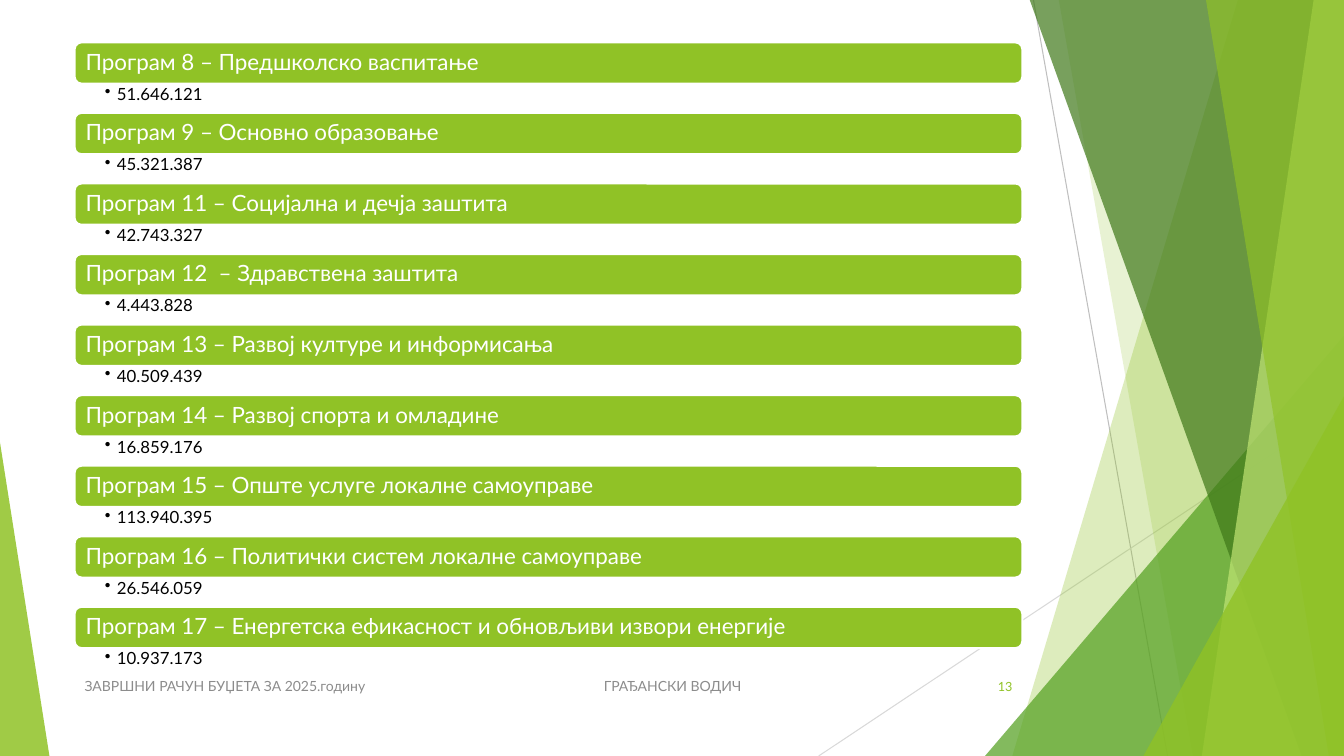
from lxml import etree
from pptx import Presentation, util as u
from pptx.dml.color import RGBColor
from pptx.enum import shapes, text
from pptx.oxml.ns import qn

PX = 9144
THEME = {
    "font": "Lato",
    "green": "90C226", "mid_green": "54A021", "dark_green": "3F7819", "pale_green": "C0E474",
    "white": "FFFFFF", "black": "000000", "grey": "8C8C8C",
    "line_dark": "BFBFBF", "line_light": "D9D9D9",
    "title_size": 16, "value_size": 12, "footer_size": 10, "number_size": 9,
}

programs = [
    ("Програм 8 – Предшколско васпитање", "51.646.121"),
    ("Програм 9 – Основно образовање", "45.321.387"),
    ("Програм 11 – Социјална и дечја заштита", "42.743.327"),
    ("Програм 12  – Здравствена заштита", "4.443.828"),
    ("Програм 13 – Развој културе и информисања", "40.509.439"),
    ("Програм 14 – Развој спорта и омладине", "16.859.176"),
    ("Програм 15 – Опште услуге локалне самоуправе", "113.940.395"),
    ("Програм 16 – Политички систем локалне самоуправе", "26.546.059"),
    ("Програм 17 – Енергетска ефикасност и обновљиви извори енергије", "10.937.173"),
]

presentation = Presentation()
presentation.slide_width = 1333 * PX
presentation.slide_height = 750 * PX
slide = presentation.slides.add_slide(presentation.slide_layouts[6])


def paint(shape, color, opacity=100):
    shape.shadow.inherit = False
    shape.line.fill.background()
    shape.fill.solid()
    shape.fill.fore_color.rgb = RGBColor.from_string(THEME[color])
    if opacity < 100:
        color_node = shape.fill._xPr.find(".//" + qn("a:srgbClr"))
        etree.SubElement(color_node, qn("a:alpha"), val=str(opacity * 1000))


def write(shape, words, size, color, margins, anchor=text.MSO_ANCHOR.MIDDLE):
    frame = shape.text_frame
    frame.text = words
    frame.word_wrap = True
    frame.vertical_anchor = anchor
    frame.margin_left, frame.margin_top, frame.margin_right, frame.margin_bottom = (
        margin * PX for margin in margins)
    paragraph = frame.paragraphs[0]
    paragraph.alignment = text.PP_ALIGN.LEFT
    for run in paragraph.runs:
        run.font.name = THEME["font"]
        run.font.size = u.Pt(THEME[size])
        run.font.color.rgb = RGBColor.from_string(THEME[color])
    return paragraph


for start_x, start_y, end_x, end_y, color in [
    (1025, 0, 1158, 750, "line_dark"),
    (1333, 403, 812, 750, "line_light"),
]:
    connector = slide.shapes.add_connector(
        shapes.MSO_CONNECTOR.STRAIGHT, start_x * PX, start_y * PX, end_x * PX, end_y * PX)
    connector.line.color.rgb = RGBColor.from_string(THEME[color])
    connector.line.width = u.Pt(0.75)
    etree.SubElement(connector._element.spPr, qn("a:effectLst"))

for kind, geometry, color, opacity in [
    ("band", (1228, 1004), "green", 30),
    ("band", (1050, 1183), "green", 20),
    ("triangle", (977, 333, 356, 417, 1), "mid_green", 72),
    ("band", (1021, 1291), "dark_green", 70),
    ("band", (1303, 1192), "pale_green", 70),
    ("band", (1196, 1318), "green", 65),
    ("triangle", (1134, 393, 199, 357, 1), "green", 80),
    ("triangle", (0, 439, 49, 311, 0), "green", 85),
]:
    if kind == "band":
        top_x, bottom_x = geometry
        outline = slide.shapes.build_freeform(top_x, -1, scale=PX)
        outline.add_line_segments([(1333, -1), (1333, 750), (bottom_x, 750)], close=True)
        facet = outline.convert_to_shape()
    else:
        left, top, width, height, apex = geometry
        facet = slide.shapes.add_shape(
            shapes.MSO_SHAPE.ISOSCELES_TRIANGLE, left * PX, top * PX, width * PX, height * PX)
        facet.adjustments[0] = apex
    paint(facet, color, opacity)

number_box = slide.shapes.add_textbox(939 * PX, 661 * PX, 75 * PX, 40 * PX)
paragraph = write(number_box, "13", "number_size", "green", (10, 5, 10, 5))
paragraph.alignment = text.PP_ALIGN.RIGHT

footer_box = slide.shapes.add_textbox(74 * PX, 661 * PX, 689 * PX, 40 * PX)
paragraph = write(footer_box, "ЗАВРШНИ РАЧУН БУЏЕТА ЗА 2025.годину\tГРАЂАНСКИ ВОДИЧ",
                  "footer_size", "grey", (10, 5, 10, 5))
tabs = etree.SubElement(paragraph._p.get_or_add_pPr(), qn("a:tabLst"))
etree.SubElement(tabs, qn("a:tab"), pos=str(515 * PX), algn="l")

for index, (title, amount) in enumerate(programs):
    top = 42 + 70 * index
    bar = slide.shapes.add_shape(
        shapes.MSO_SHAPE.ROUNDED_RECTANGLE, 74 * PX, top * PX, 940 * PX, 41 * PX)
    paint(bar, "green")
    bar.line.color.rgb = RGBColor.from_string(THEME["white"])
    bar.line.width = u.Pt(1.5)
    paragraph = write(bar, title, "title_size", "white", (9, 7, 9, 7))
    paragraph.line_spacing = 0.9

    value_box = slide.shapes.add_textbox(74 * PX, (top + 41) * PX, 940 * PX, 29 * PX)
    paragraph = write(value_box, amount, "value_size", "black", (30, 2, 12, 2),
                      text.MSO_ANCHOR.TOP)
    paragraph.level = 1
    paragraph.line_spacing = 0.9
    properties = paragraph._p.get_or_add_pPr()
    properties.set("marL", str(12 * PX))
    properties.set("indent", str(-12 * PX))
    etree.SubElement(properties, qn("a:buChar"), char="•")

presentation.save("out.pptx")
